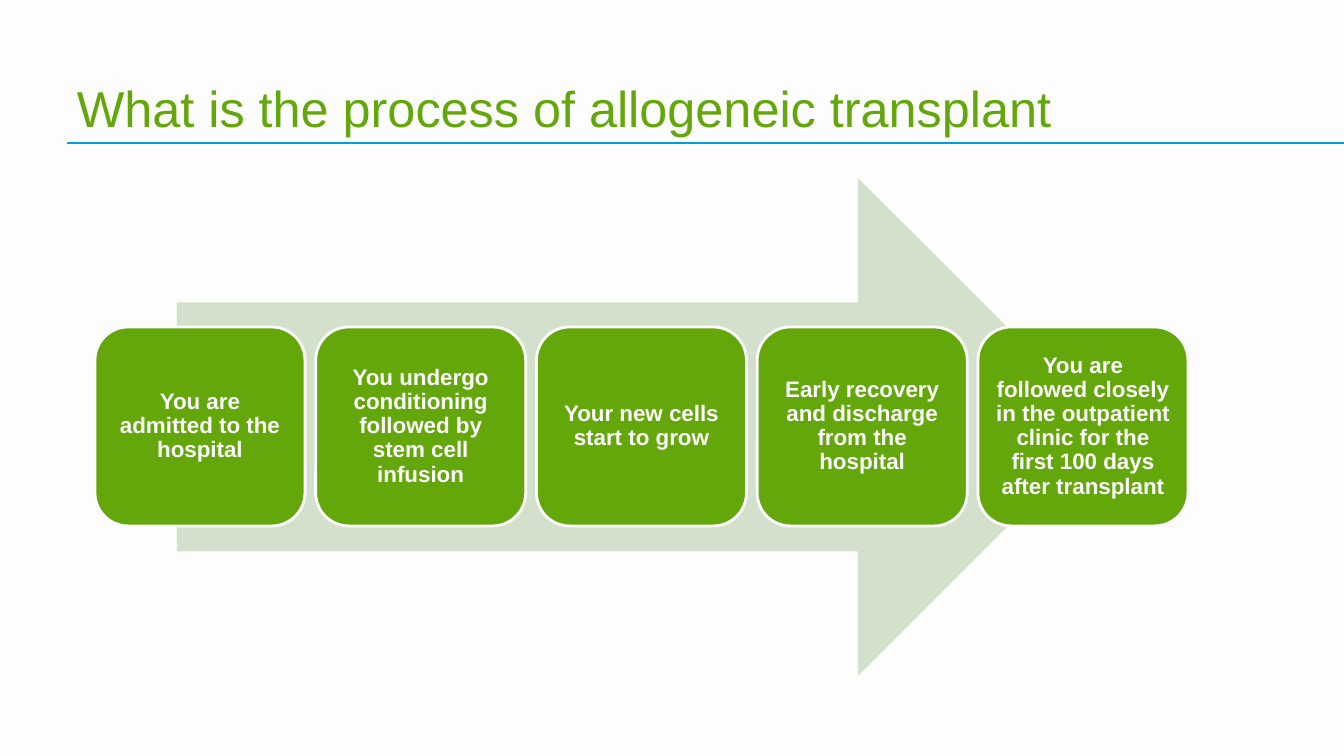
from lxml import etree
from pptx import Presentation
from pptx import util as u
from pptx.dml.color import RGBColor
from pptx.enum import shapes, text
from pptx.oxml.ns import qn

PX = u.Inches(1) / 100.8
COLORS = {"paper": "FDFDFD", "green": "63A70A", "pale": "D3E1CC", "blue": "00A0DD"}


def px(*lengths):
    return [round(length * PX) for length in lengths]


def add_words(para, words, size, color, bold=False):
    span = para.add_run()
    span.text = words
    span.font.name = "Arial"
    span.font.size = u.Pt(size)
    span.font.bold = bold
    span.font.color.rgb = RGBColor.from_string(COLORS[color])


deck = Presentation()
deck.slide_width, deck.slide_height = px(1344, 756)
page = deck.slides.add_slide(deck.slide_layouts[6])
page.background.fill.solid()
page.background.fill.fore_color.rgb = RGBColor.from_string(COLORS["paper"])

# Rule under the title
rule = page.shapes.add_connector(shapes.MSO_CONNECTOR.STRAIGHT, *px(67, 143, 1344, 143))
rule.line.color.rgb = RGBColor.from_string(COLORS["blue"])
rule.line.width = u.Pt(0.75)
etree.SubElement(rule._element.spPr, qn("a:effectLst"))

# Title
title = page.shapes.add_textbox(*px(67, 17, 1210, 126)).text_frame
title.word_wrap = True
title.vertical_anchor = text.MSO_ANCHOR.BOTTOM
add_words(title.paragraphs[0], "What is the process of allogeneic transplant", 36, "green")

# Arrow behind the steps
arrow = page.shapes.add_shape(shapes.MSO_SHAPE.RIGHT_ARROW, *px(177, 178, 930, 498))
arrow.shadow.inherit = False
arrow.fill.solid()
arrow.fill.fore_color.rgb = RGBColor.from_string(COLORS["pale"])
arrow.line.fill.background()

# Steps, spread evenly between the first and last left edges
steps = [
    "You are admitted to the hospital",
    "You undergo conditioning followed by stem cell infusion",
    "Your new cells start to grow",
    "Early recovery and discharge from the hospital",
    "You are followed closely in the outpatient clinic for the first 100 days after transplant",
]
first_left, last_left = 95, 978
pitch = (last_left - first_left) / (len(steps) - 1)
for index, step in enumerate(steps):
    box = page.shapes.add_shape(
        shapes.MSO_SHAPE.ROUNDED_RECTANGLE, *px(first_left + index * pitch, 327, 210, 199)
    )
    box.shadow.inherit = False
    box.fill.solid()
    box.fill.fore_color.rgb = RGBColor.from_string(COLORS["green"])
    box.line.color.rgb = RGBColor.from_string(COLORS["paper"])
    box.line.width = u.Pt(2)
    frame = box.text_frame
    frame.word_wrap = True
    frame.vertical_anchor = text.MSO_ANCHOR.MIDDLE
    frame.margin_left, frame.margin_top, frame.margin_right, frame.margin_bottom = px(7, 7, 7, 7)
    para = frame.paragraphs[0]
    para.alignment = text.PP_ALIGN.CENTER
    para.line_spacing = 0.9
    add_words(para, step, 16, "paper", bold=True)

deck.save("out.pptx")
